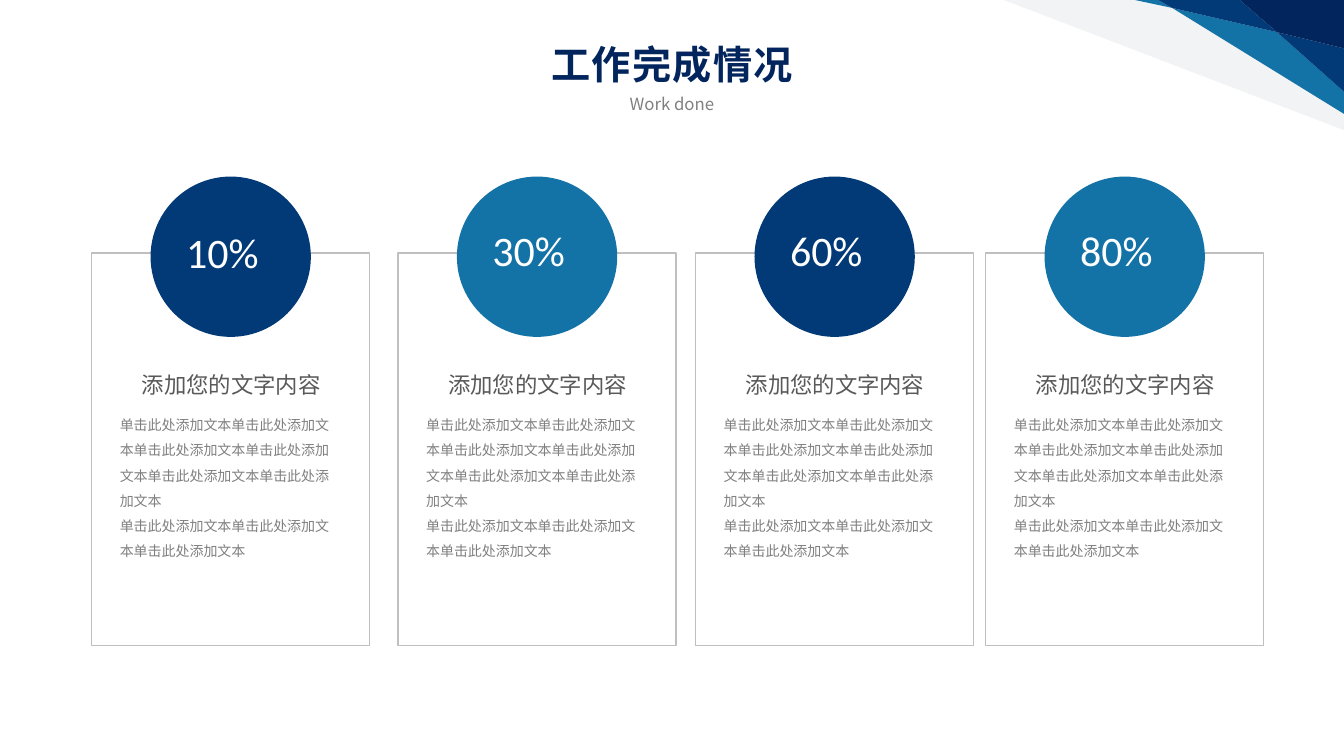
from lxml import etree
from pptx import Presentation
from pptx.dml.color import RGBColor
from pptx.enum.shapes import MSO_SHAPE
from pptx.enum.text import MSO_AUTO_SIZE, PP_ALIGN
from pptx.oxml.ns import qn
from pptx.util import Cm, Pt

RECTANGLE = MSO_SHAPE.RECTANGLE
OVAL = MSO_SHAPE.OVAL
LEFT, CENTER, RIGHT = PP_ALIGN.LEFT, PP_ALIGN.CENTER, PP_ALIGN.RIGHT
GROW, FIXED = MSO_AUTO_SIZE.SHAPE_TO_FIT_TEXT, MSO_AUTO_SIZE.NONE

COLORS = {
    "ink": "03255D",
    "navy": "023977",
    "blue": "1372A6",
    "mist": "F1F3F4",
    "border": "BFBFBF",
    "heading": "595959",
    "body": "808080",
    "white": "FFFFFF",
}
CHINESE_FONT = "Noto Sans CJK SC"
NUMBER_FONT = "Calibri"
SLIDE_WIDTH, SLIDE_HEIGHT = 33.87, 19.05

CORNER_FACETS = [
    ("mist", [(0, 0), (8.57, 3.28), (8.57, 0)]),
    ("blue", [(3.3, 0), (4.24, 0.2), (3.89, 0)]),
    ("blue", [(4.24, 0.2), (8.57, 2.87), (8.57, 2.31), (6.88, 0.81)]),
    ("navy", [(6.88, 0.81), (8.57, 2.31), (8.57, 1.22)]),
    ("ink", [(5.94, 0), (6.88, 0.81), (8.57, 1.22), (8.57, 0)]),
    ("navy", [(3.89, 0), (4.24, 0.2), (6.88, 0.81), (5.94, 0)]),
]

CARD_TOP, CARD_WIDTH, CARD_HEIGHT = 6.38, 7.01, 9.88
CIRCLE_SIZE = 4.04
CARDS = [
    (2.31, "10%", "navy", 0.79),
    (10.03, "30%", "blue", 0.84),
    (17.53, "60%", "navy", 0.84),
    (24.84, "80%", "blue", 0.84),
]
CARD_HEADING = "添加您的文字内容"
PHRASE = "单击此处添加文本"
CARD_BODY = PHRASE * 6 + "\n" + PHRASE * 3


def rgb(name):
    return RGBColor.from_string(COLORS[name])


def paint(shape, fill=None, line=None):
    shape.shadow.inherit = False
    if fill:
        shape.fill.solid()
        shape.fill.fore_color.rgb = rgb(fill)
    else:
        shape.fill.background()
    if line:
        shape.line.color.rgb = rgb(line)
        shape.line.width = Pt(1)
    else:
        shape.line.fill.background()


def add_text(slide, box, text, size, color, align=LEFT, font=CHINESE_FONT,
             bold=False, spacing=None, line_spacing=None, wrap=True, fit=GROW):
    shape = slide.shapes.add_textbox(*map(Cm, box))
    frame = shape.text_frame
    frame.text = text
    frame.word_wrap = wrap
    frame.auto_size = fit
    for paragraph in frame.paragraphs:
        paragraph.alignment = align
        if line_spacing:
            paragraph.line_spacing = line_spacing
        for run in paragraph.runs:
            run.font.size = Pt(size)
            run.font.bold = bold
            run.font.color.rgb = rgb(color)
            run.font.name = font
            properties = run.font._element
            etree.SubElement(properties, qn("a:ea")).set("typeface", font)
            if spacing:
                properties.set("spc", str(spacing * 100))


def add_corner(slide, left, top):
    for color, points in CORNER_FACETS:
        corners = [(Cm(left + x), Cm(top + y)) for x, y in points]
        builder = slide.shapes.build_freeform(*corners[0])
        builder.add_line_segments(corners[1:], close=True)
        paint(builder.convert_to_shape(), fill=color)


def add_header(slide, left, top, width):
    add_text(slide, (left, top, width, 1.45), "工作完成情况", 28, "ink",
             CENTER, bold=True, spacing=1)
    subtitle_width = 8.28
    subtitle_left = left + (width - subtitle_width) / 2
    add_text(slide, (subtitle_left, top + 1.35, subtitle_width, 0.76),
             "Work done", 12, "body", CENTER)


def add_card(slide, left, top, width, height, percent, color, percent_rise):
    frame = slide.shapes.add_shape(
        RECTANGLE, Cm(left), Cm(top), Cm(width), Cm(height))
    paint(frame, line="border")
    circle = slide.shapes.add_shape(
        OVAL, Cm(left + (width - CIRCLE_SIZE) / 2), Cm(top - 1.93),
        Cm(CIRCLE_SIZE), Cm(CIRCLE_SIZE))
    paint(circle, fill=color)
    add_text(slide, (left + 0.46, top + 3.78, 6.07, 4.14), CARD_BODY, 10,
             "body", line_spacing=1.5, fit=FIXED)
    add_text(slide, (left + 0.99, top + 2.84, 5.03, 0.94), CARD_HEADING, 16,
             "heading", RIGHT, wrap=False)
    add_text(slide, (left + 2.13, top - percent_rise, 2.75, 1.52), percent,
             30, "white", font=NUMBER_FONT)


def main():
    presentation = Presentation()
    presentation.slide_width = Cm(SLIDE_WIDTH)
    presentation.slide_height = Cm(SLIDE_HEIGHT)
    slide = presentation.slides.add_slide(presentation.slide_layouts[6])
    add_corner(slide, SLIDE_WIDTH - 8.57, 0)
    add_header(slide, 0, 0.89, SLIDE_WIDTH)
    for left, percent, color, percent_rise in CARDS:
        add_card(slide, left, CARD_TOP, CARD_WIDTH, CARD_HEIGHT,
                 percent, color, percent_rise)
    presentation.save("out.pptx")


if __name__ == "__main__":
    main()
